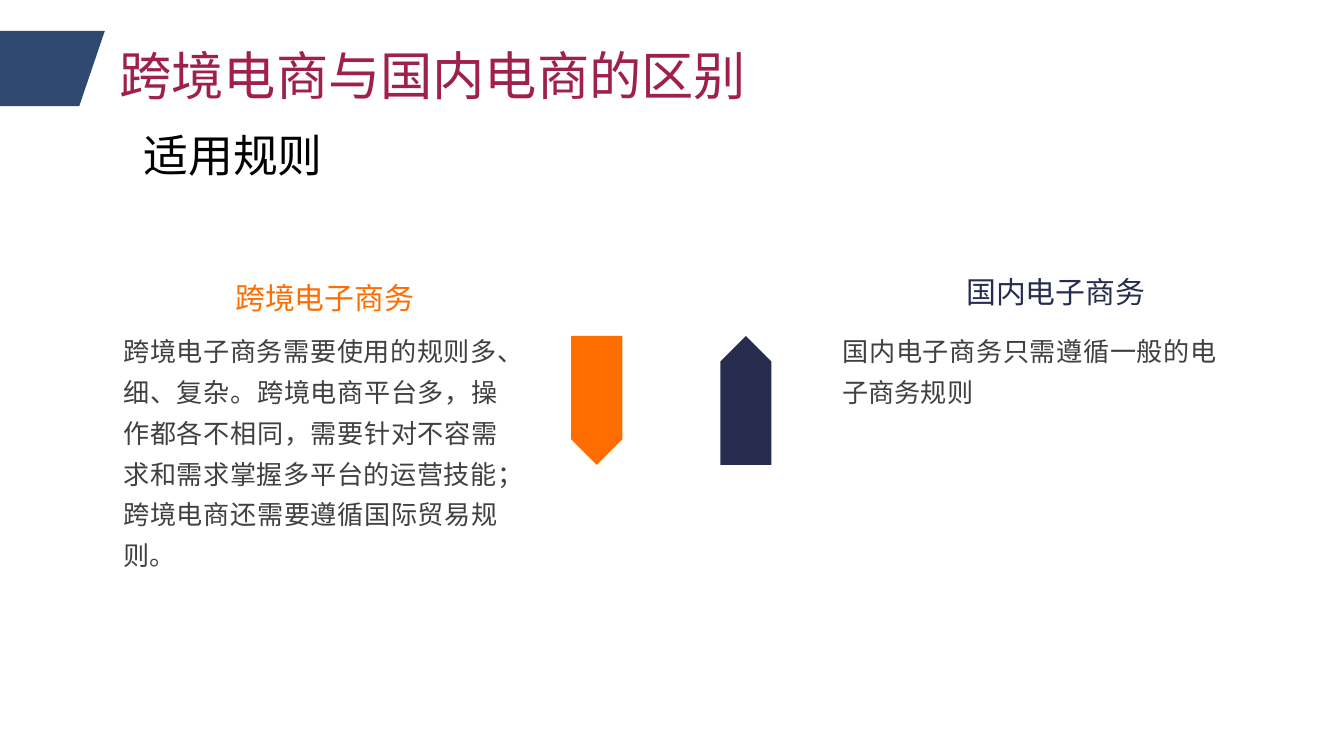
import pptx
import pptx.util
import pptx.dml.color
import pptx.enum.shapes
import pptx.enum.text
import pptx.oxml

COLUMNS = 100
SLIDE_WIDTH = pptx.util.Inches(10)
SLIDE_HEIGHT = SLIDE_WIDTH * 9 // 16
FONT = "Noto Sans CJK SC"
ALIGN = pptx.enum.text.PP_ALIGN


def grid(*cells):
    return [round(cell * SLIDE_WIDTH / COLUMNS) for cell in cells]


def color(value):
    return pptx.dml.color.RGBColor.from_string(value)


def paint(shape, fill):
    shape.shadow.inherit = False
    shape.fill.solid()
    shape.fill.fore_color.rgb = color(fill)
    shape.line.fill.background()


def write(holder, box, text, size, ink, align=ALIGN.LEFT, spacing=1.0):
    holder.left, holder.top, holder.width, holder.height = grid(*box)
    frame = holder.text_frame
    frame.text = text
    frame.word_wrap = True
    frame.auto_size = pptx.enum.text.MSO_AUTO_SIZE.SHAPE_TO_FIT_TEXT
    frame.vertical_anchor = pptx.enum.text.MSO_ANCHOR.TOP
    paragraph = frame.paragraphs[0]
    paragraph.alignment = align
    paragraph.line_spacing = spacing
    run = paragraph.runs[0]
    run.font.size = pptx.util.Pt(size)
    run.font.name = FONT
    run.font.color.rgb = color(ink)
    east_asian = pptx.oxml.parse_xml(
        '<a:ea xmlns:a="http://schemas.openxmlformats.org/drawingml/2006/main" '
        f'typeface="{FONT}"/>'
    )
    run.font._element.find(pptx.oxml.ns.qn("a:latin")).addnext(east_asian)


def add_text(slide, box, *style, **layout):
    write(slide.shapes.add_textbox(*grid(*box)), box, *style, **layout)


def add_header(slide, box, title, subtitle):
    left, top, width, height = box
    corners = [(0, 0), (7.8, 0), (5.9, height), (0, height)]
    points = [grid(left + x, top + y) for x, y in corners]
    builder = slide.shapes.build_freeform(*points[0])
    builder.add_line_segments(points[1:], close=True)
    paint(builder.convert_to_shape(), "304971")
    write(slide.shapes.title, (left + 7.9, top + 0.4, width - 7.9, 5.7),
          title, 28, "A0204C")
    add_text(slide, (left + 9.7, top + 6.7, 26.6, 5), subtitle, 24, "000000")


def add_side(slide, box, heading, heading_box, rules, accent, arrow_center, turn):
    left, top, width, height = box
    x, y, heading_width = heading_box
    add_text(slide, (left + x, top + y, heading_width, 3.7),
             heading, 16, accent, align=ALIGN.CENTER)
    add_text(slide, (left, top + 3.9, width, height - 3.9),
             rules, 14, "404040", align=ALIGN.JUSTIFY, spacing=1.3)
    length, thickness = 9.6, 3.8
    arrow = slide.shapes.add_shape(
        pptx.enum.shapes.MSO_SHAPE.PENTAGON,
        *grid(left + arrow_center - length / 2, top + 9.9 - thickness / 2,
              length, thickness))
    arrow.rotation = turn
    paint(arrow, accent)


def main():
    deck = pptx.Presentation()
    deck.slide_width, deck.slide_height = SLIDE_WIDTH, SLIDE_HEIGHT
    slide = deck.slides.add_slide(deck.slide_layouts[5])
    add_header(slide, (0, 2.3, 63.9, 5.6), "跨境电商与国内电商的区别", "适用规则")
    add_side(
        slide, (8.2, 19.9, 29.8, 23.2), "跨境电子商务", (7.5, 0.4, 16.9),
        "跨境电子商务需要使用的规则多、细、复杂。跨境电商平台多，操作都各不相同，"
        "需要针对不容需求和需求掌握多平台的运营技能；跨境电商还需要遵循国际贸易规则。",
        "FF6C00", 36.2, 90)
    add_side(
        slide, (61.7, 19.9, 29.8, 11), "国内电子商务", (6.9, 0, 19.9),
        "国内电子商务只需遵循一般的电子商务规则",
        "282D4F", -6.2, 270)
    deck.save("out.pptx")


if __name__ == "__main__":
    main()
